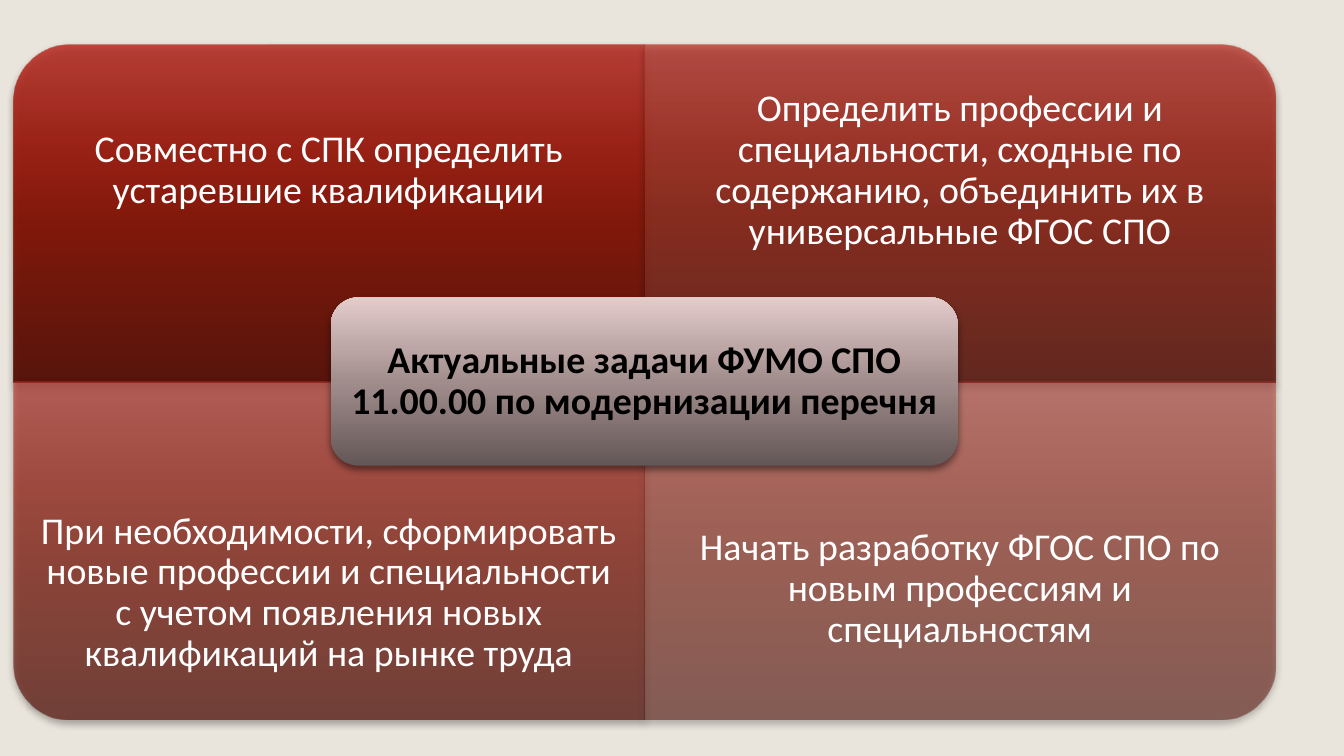
from lxml import etree
from pptx import Presentation
from pptx.dml.color import RGBColor
from pptx.enum import shapes as sh, text as tx
from pptx.oxml import ns
from pptx.util import Inches, Pt

HEAD = "Актуальные задачи ФУМО СПО 11.00.00 по модернизации перечня"
TILES = [
    ("Совместно с СПК определить устаревшие квалификации", 270, 90),
    ("Определить профессии и специальности, сходные по содержанию, "
     "объединить их в универсальные ФГОС СПО", 0, 77),
    ("При необходимости, сформировать новые профессии и специальности "
     "с учетом появления новых квалификаций на рынке труда", 180, 63),
    ("Начать разработку ФГОС СПО по новым профессиям и специальностям", 90, 50),
]
RED = [(0, "520900"), (50, "830F00"), (70, "9B180B"), (100, "BA372E")]
GREY = [(0, "645757"), (50, "A18D8C"), (70, "BCA7A6"), (100, "E4CCCB")]
LEFT, TOP, WIDE, HIGH = 0.13, 0.44, 6.26, 3.35
TEXT_H = HIGH * 0.75
HUB = (3.28, 2.95, 6.22, 1.67)
PAD = 0.08


def color(code):
    return RGBColor.from_string(code)


def add(root, tag, **attrs):
    node = etree.SubElement(root, ns.qn("a:" + tag))
    for key, val in attrs.items():
        node.set(key, str(val))
    return node


def shade(shape, stops, alpha):
    props = shape._element.spPr
    grad = add(props, "gradFill", rotWithShape=0)
    row = add(grad, "gsLst")
    for pos, code in stops:
        stop = add(row, "gs", pos=pos * 1000)
        tone = add(stop, "srgbClr", val=code)
        if alpha < 100:
            add(tone, "alpha", val=alpha * 1000)
    add(grad, "lin", ang=270 * 60000, scaled=0)
    shape.line.fill.background()
    glow = add(add(props, "effectLst"), "outerShdw", blurRad=Pt(5), dist=Pt(3),
               dir=90 * 60000, algn="ctr", rotWithShape=0)
    add(add(glow, "srgbClr", val="000000"), "alpha", val=45000)


def panel(slide, kind, box, stops, turn=0, alpha=100):
    x, y, w, h = box
    if turn % 180:
        x, y, w, h = x + (w - h) / 2, y + (h - w) / 2, h, w
    shape = slide.shapes.add_shape(kind, *map(Inches, (x, y, w, h)))
    shape.rotation = turn
    shade(shape, stops, alpha)


def write(shape, words, tone="FFFFFF", bold=False, inset=0.21, size=27):
    frame = shape.text_frame
    frame.word_wrap = True
    frame.auto_size = tx.MSO_AUTO_SIZE.NONE
    frame.vertical_anchor = tx.MSO_ANCHOR.MIDDLE
    frame.margin_left = frame.margin_right = Inches(inset)
    frame.margin_top = frame.margin_bottom = Inches(inset)
    frame.text = words
    para = frame.paragraphs[0]
    para.alignment = tx.PP_ALIGN.CENTER
    para.line_spacing = 0.9
    para.space_before = Pt(0)
    font = para.runs[0].font
    font.name, font.size, font.bold = "Calibri", Pt(size), bold
    font.color.rgb = color(tone)


def main():
    deck = Presentation()
    deck.slide_width, deck.slide_height = Inches(13.33), Inches(7.5)
    slide = deck.slides.add_slide(deck.slide_layouts[5])
    back = slide.background.fill
    back.solid()
    back.fore_color.rgb = color("E9E5DC")

    for num, (words, turn, alpha) in enumerate(TILES):
        row, col = divmod(num, 2)
        x, y = LEFT + col * WIDE, TOP + row * HIGH
        panel(slide, sh.MSO_SHAPE.ROUND_1_RECTANGLE, (x, y, WIDE, HIGH),
              RED, turn, alpha)
        top = y + row * (HIGH - TEXT_H)
        if num == 3:
            top -= 0.04
        label = slide.shapes.add_textbox(*map(Inches, (x, top, WIDE, TEXT_H)))
        write(label, words)

    panel(slide, sh.MSO_SHAPE.ROUNDED_RECTANGLE, HUB, GREY)
    x, y, w, h = HUB
    title = slide.shapes.title
    title.left, title.top = Inches(x + PAD), Inches(y + PAD)
    title.width, title.height = Inches(w - 2 * PAD), Inches(h - 2 * PAD)
    write(title, HEAD, tone="000000", bold=True, inset=0.11)
    slide.shapes._spTree.append(title._element)
    deck.save("out.pptx")


if __name__ == "__main__":
    main()
